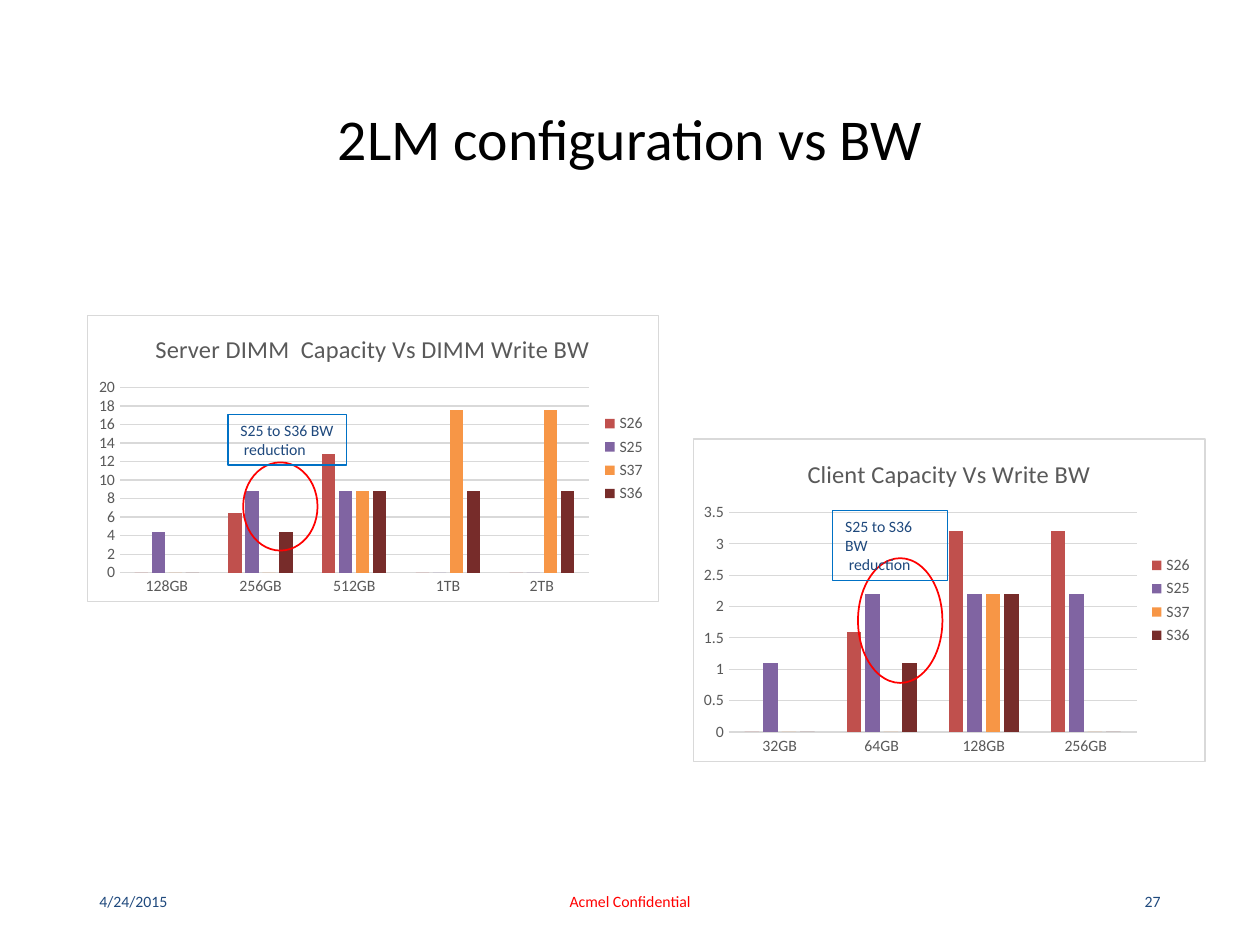
from lxml import etree
from pptx import Presentation
from pptx.chart.data import CategoryChartData
from pptx.dml.color import RGBColor
from pptx.enum.chart import XL_CHART_TYPE, XL_LEGEND_POSITION, XL_TICK_MARK
from pptx.enum.shapes import MSO_SHAPE
from pptx.enum.text import MSO_ANCHOR, PP_ALIGN
from pptx.oxml import parse_xml
from pptx.util import Inches, Pt

COLUMN = XL_CHART_TYPE.COLUMN_CLUSTERED
LEGEND_RIGHT = XL_LEGEND_POSITION.RIGHT
NO_TICK = XL_TICK_MARK.NONE
OVAL = MSO_SHAPE.OVAL
TOP, MIDDLE = MSO_ANCHOR.TOP, MSO_ANCHOR.MIDDLE
LEFT, CENTER, RIGHT = PP_ALIGN.LEFT, PP_ALIGN.CENTER, PP_ALIGN.RIGHT

COLS, ROWS = 100, 75
COLORS = {
    "title": "000000", "text": "1F497D", "alert": "FF0000", "callout": "0071C5",
    "label": "595959", "rule": "D9D9D9",
    "S26": "C0504D", "S25": "8064A2", "S37": "F79646", "S36": "772C2A",
}
BORDER_XML = (
    '<c:spPr xmlns:c="http://schemas.openxmlformats.org/drawingml/2006/chart" '
    'xmlns:a="http://schemas.openxmlformats.org/drawingml/2006/main">'
    '<a:solidFill><a:srgbClr val="FFFFFF"/></a:solidFill>'
    '<a:ln w="9525"><a:solidFill><a:srgbClr val="{}"/></a:solidFill></a:ln></c:spPr>'
)


def rgb(name):
    return RGBColor.from_string(COLORS[name])


def style_font(font, size, color):
    font.name, font.size, font.bold = "Calibri", Pt(size), False
    font.color.rgb = rgb(color)


def write(tf, text, size=9, color="text", align=LEFT, anchor=TOP, wrap=True, spacing=None):
    tf.word_wrap = wrap
    tf.vertical_anchor = anchor
    for i, line in enumerate(text.split("\n")):
        p = tf.add_paragraph() if i else tf.paragraphs[0]
        p.alignment = align
        if spacing:
            p.line_spacing = spacing
        r = p.add_run()
        r.text = line
        style_font(r.font, size, color)


def outline(line, color, width=0.75):
    line.color.rgb = rgb(color)
    line.width = Pt(width)


class Deck:
    def __init__(self):
        self.prs = Presentation()
        self.prs.slide_width, self.prs.slide_height = Inches(10), Inches(7.5)
        self.s = self.prs.slides.add_slide(self.prs.slide_layouts[5])

    def box(self, col, row, width, height):
        dx, dy = self.prs.slide_width / COLS, self.prs.slide_height / ROWS
        return int(col * dx), int(row * dy), int(width * dx), int(height * dy)

    def title(self, text, *place):
        sp = self.s.shapes.title
        sp.left, sp.top, sp.width, sp.height = self.box(*place)
        write(sp.text_frame, text, size=33, color="title", align=CENTER,
              anchor=MIDDLE, spacing=0.9)

    def text(self, text, *place, border=None, **fmt):
        sp = self.s.shapes.add_textbox(*self.box(*place))
        if border:
            outline(sp.line, border)
        write(sp.text_frame, text, **fmt)

    def ring(self, *place):
        sp = self.s.shapes.add_shape(OVAL, *self.box(*place))
        sp.shadow.inherit = False
        sp.fill.background()
        outline(sp.line, "alert", 1)

    def chart(self, title, cats, series, *place):
        data = CategoryChartData()
        data.categories = cats
        for name, values in series.items():
            data.add_series(name, values)
        chart = self.s.shapes.add_chart(COLUMN, *self.box(*place), data).chart
        style_font(chart.font, 10, "title")
        write(chart.chart_title.text_frame, title, size=14, color="label", align=CENTER)
        chart.chart_title.include_in_layout = False
        chart.has_legend = True
        chart.legend.position = LEGEND_RIGHT
        chart.legend.include_in_layout = False
        style_font(chart.legend.font, 9, "label")
        for axis in (chart.category_axis, chart.value_axis):
            axis.major_tick_mark = axis.minor_tick_mark = NO_TICK
            style_font(axis.tick_labels.font, 9, "label")
        outline(chart.category_axis.format.line, "rule")
        chart.value_axis.format.line.fill.background()
        outline(chart.value_axis.major_gridlines.format.line, "rule")
        plot = chart.plots[0]
        plot.vary_by_categories = False
        plot.gap_width, plot.overlap = 219, -27
        for ser in plot.series:
            ser.format.fill.solid()
            ser.format.fill.fore_color.rgb = rgb(ser.name)
        root = chart.element
        root.find(etree.QName(root.nsmap["c"], "chart")).addnext(
            parse_xml(BORDER_XML.format(COLORS["rule"])))


def main():
    deck = Deck()
    deck.title("2LM configuration vs BW", 6.9, 4, 86.2, 14.5)

    footers = [("4/24/2015", 6.9, 22.5, "text", LEFT),
               ("Acmel Confidential", 33.1, 33.8, "alert", CENTER),
               ("27", 70.6, 22.5, "text", RIGHT)]
    for text, col, width, color, align in footers:
        deck.text(text, col, 69.5, width, 4, color=color, align=align, anchor=MIDDLE)

    deck.chart("Server DIMM  Capacity Vs DIMM Write BW",
               ["128GB", "256GB", "512GB", "1TB", "2TB"],
               {"S26": (0, 6.4, 12.8, 0, 0),
                "S25": (4.4, 8.8, 8.8, 0, 0),
                "S37": (0, 0, 8.8, 17.6, 17.6),
                "S36": (0, 4.4, 8.8, 8.8, 8.8)},
               6.9, 25, 45.4, 22.8)
    deck.chart("Client Capacity Vs Write BW",
               ["32GB", "64GB", "128GB", "256GB"],
               {"S26": (0, 1.6, 3.2, 3.2),
                "S25": (1.1, 2.2, 2.2, 2.2),
                "S37": (0, 0, 2.2, 0),
                "S36": (0, 1.1, 2.2, 0)},
               55, 34.8, 40.7, 25.7)

    deck.ring(19.3, 36.7, 5.9, 7)
    deck.ring(68.1, 44.3, 6.7, 9.9)

    note = "S25 to S36 BW\n reduction"
    deck.text(note, 18.1, 32.9, 9.4, 4, border="callout", wrap=False)
    deck.text(note, 66.1, 40.5, 9.1, 5.6, border="callout")

    deck.prs.save("out.pptx")


if __name__ == "__main__":
    main()
